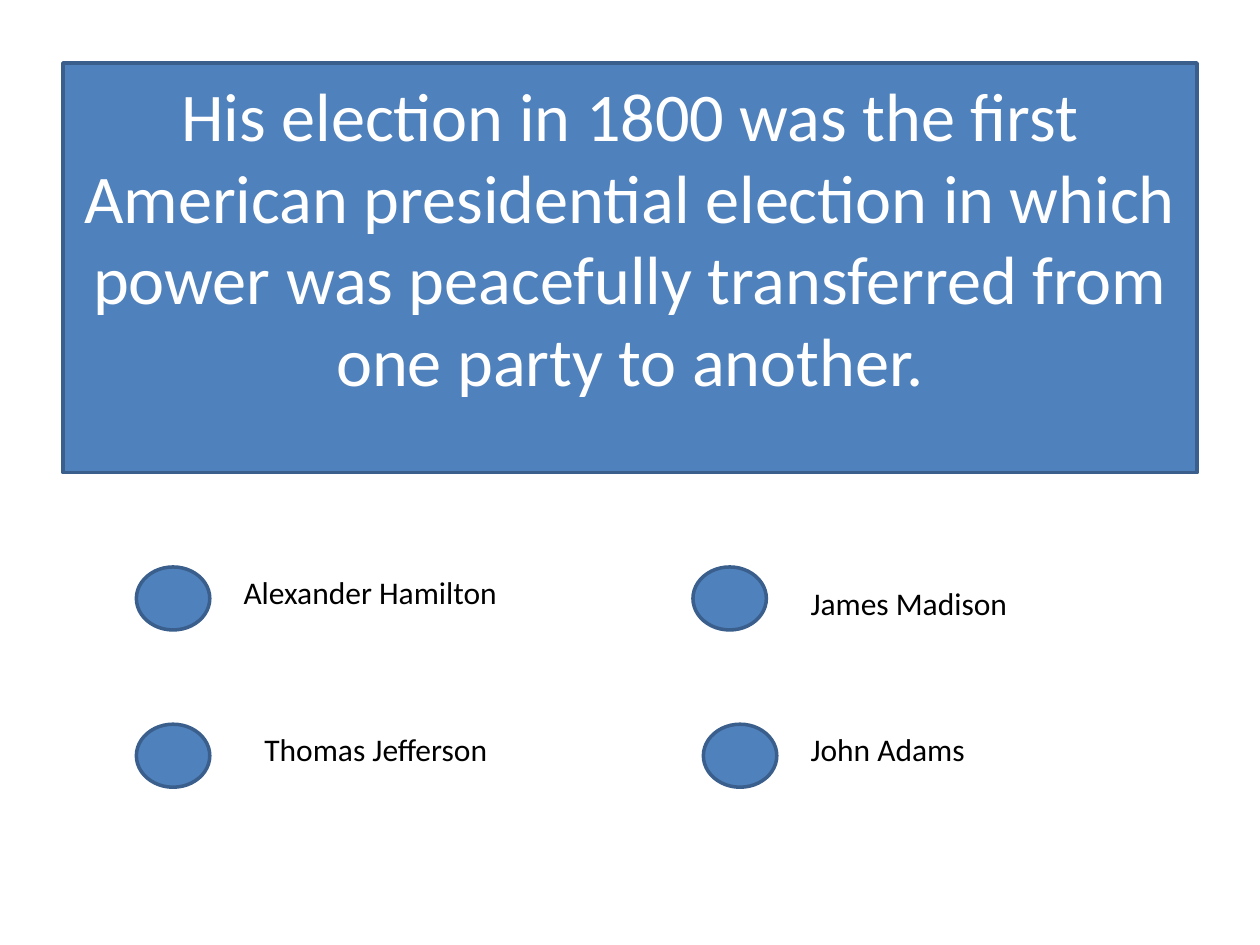
"""Build a quiz slide with one question and four answer choices."""
import pptx
import pptx.dml.color
import pptx.enum.shapes
import pptx.enum.text
import pptx.util

Cm = pptx.util.Cm
COLORS = {"fill": "4F81BD", "line": "3A5F8C", "light": "FFFFFF", "dark": "000000"}


class QuizSlide:
    """Holds the style and the current slide."""

    font = "Calibri"

    def __init__(self, deck):
        self.slide = deck.slides.add_slide(deck.slide_layouts[5])

    def color(self, name):
        return pptx.dml.color.RGBColor.from_string(COLORS[name])

    def paint(self, shape):
        shape.fill.solid()
        shape.fill.fore_color.rgb = self.color("fill")
        shape.line.color.rgb = self.color("line")
        shape.line.width = pptx.util.Pt(2)

    def set_text(self, shape, text, size, color, align):
        shape.text_frame.text = text
        shape.text_frame.word_wrap = True
        para = shape.text_frame.paragraphs[0]
        para.alignment = align
        for span in para.runs:
            span.font.name = self.font
            span.font.size = pptx.util.Pt(size)
            span.font.color.rgb = self.color(color)

    def question(self, text, left, top, width, height):
        title = self.slide.shapes.title
        title.left, title.top = Cm(left), Cm(top)
        title.width, title.height = Cm(width), Cm(height)
        self.paint(title)
        self.set_text(title, text, 39, "light", pptx.enum.text.PP_ALIGN.CENTER)
        frame = title.text_frame
        frame.auto_size = pptx.enum.text.MSO_AUTO_SIZE.NONE
        frame.vertical_anchor = pptx.enum.text.MSO_ANCHOR.TOP
        frame.margin_left = frame.margin_right = frame.margin_top = Cm(0.2)

    def marker(self, left, top):
        oval = self.slide.shapes.add_shape(
            pptx.enum.shapes.MSO_SHAPE.OVAL, Cm(left), Cm(top), Cm(1.48), Cm(1.27))
        oval.shadow.inherit = False
        self.paint(oval)

    def answer(self, text, left, top, width):
        box = self.slide.shapes.add_textbox(Cm(left), Cm(top), Cm(width), Cm(1.02))
        self.set_text(box, text, 18, "dark", pptx.enum.text.PP_ALIGN.LEFT)
        box.text_frame.auto_size = pptx.enum.text.MSO_AUTO_SIZE.SHAPE_TO_FIT_TEXT


def main():
    deck = pptx.Presentation()
    deck.slide_width, deck.slide_height = Cm(25.4), Cm(19.05)
    quiz = QuizSlide(deck)
    quiz.question(
        "His election in 1800 was the first American presidential election in which "
        "power was peacefully transferred from one party to another.",
        1.27, 1.27, 22.86, 8.26)
    upper, lower = 11.43, 14.6
    for left, top in ((2.75, upper), (2.75, lower), (13.97, upper), (14.18, lower)):
        quiz.marker(left, top)
    answers = (
        ("Thomas Jefferson", 5.08, lower, 5.72),
        ("Alexander Hamilton", 4.66, upper, 6.56),
        ("James Madison", 16.09, upper + 0.21, 4.66),
        ("John Adams", 16.09, lower, 4.87),
    )
    for answer in answers:
        quiz.answer(*answer)
    deck.save("out.pptx")


if __name__ == "__main__":
    main()
